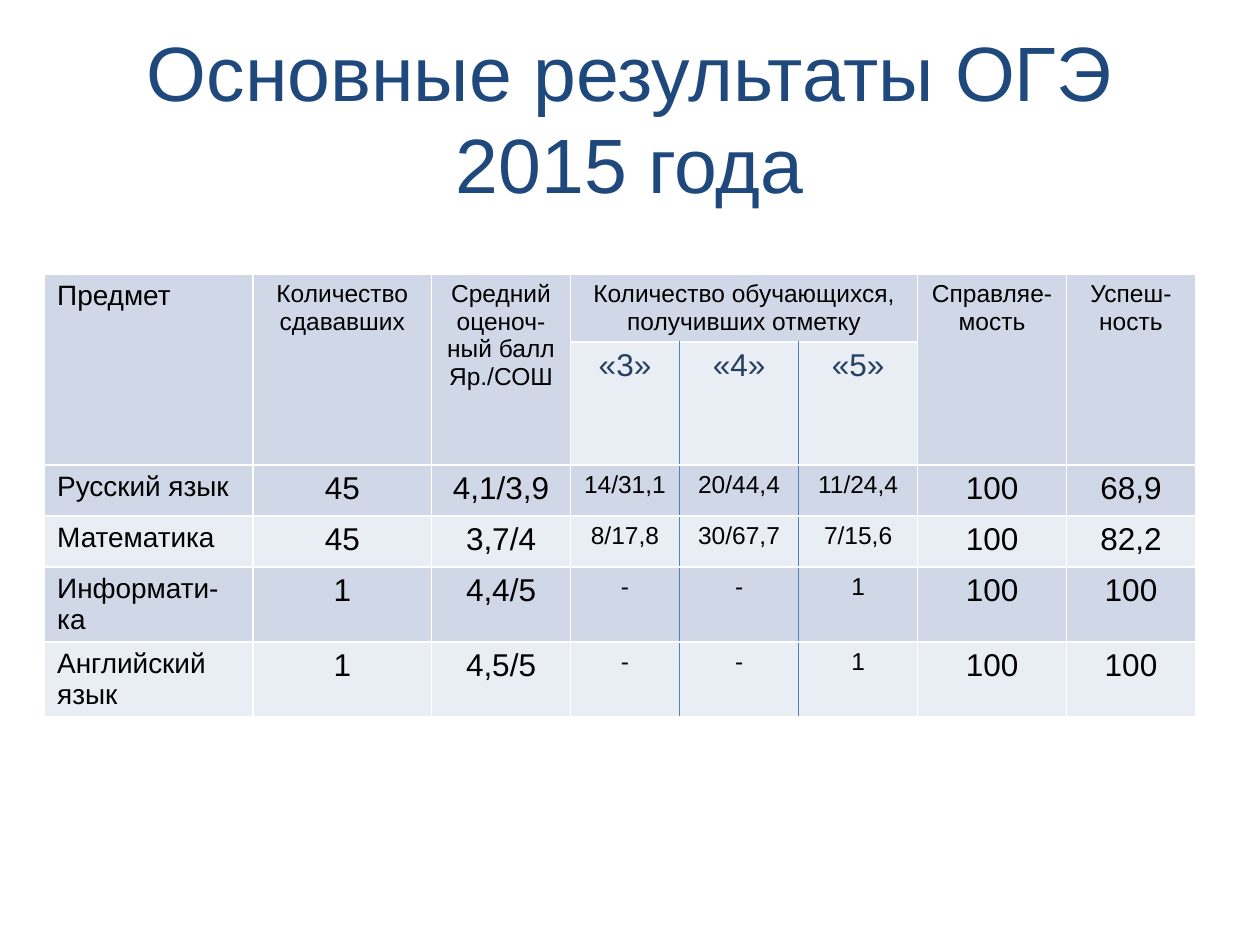
from dataclasses import dataclass
from lxml.etree import SubElement
from pptx import Presentation
from pptx.dml.color import RGBColor
from pptx.enum.text import PP_ALIGN as Align
from pptx.oxml.ns import qn
from pptx.util import Cm, Pt


@dataclass(frozen=True)
class Theme:
    font: str = "Arial"
    title: str = "1F497D"
    mark: str = "254061"
    text: str = "000000"
    dark: str = "D0D8E8"
    light: str = "E9EDF4"
    grid: str = "FFFFFF"
    rule: str = "4F81BD"
    head: int = 44
    large: int = 18
    mid: int = 16
    small: int = 14


theme = Theme()


def write(frame, text, size, color, align):
    """Put each line of text in its own paragraph."""
    for i, line in enumerate(text.split("\n")):
        para = frame.add_paragraph() if i else frame.paragraphs[0]
        para.alignment = align
        run = para.add_run()
        run.text = line
        run.font.name = theme.font
        run.font.size = Pt(size)
        run.font.color.rgb = RGBColor.from_string(color)


def edge(cell, side, color):
    line = SubElement(cell._tc.get_or_add_tcPr(), qn(f"a:ln{side}"), w=str(Pt(1)))
    fill = SubElement(line, qn("a:solidFill"))
    SubElement(fill, qn("a:srgbClr"), val=color)


deck = Presentation()
deck.slide_width, deck.slide_height = Cm(25.4), Cm(19.05)
slide = deck.slides.add_slide(deck.slide_layouts[5])

title = slide.shapes.title
title.left, title.top = Cm(1.27), Cm(0.76)
title.width, title.height = Cm(22.86), Cm(3.18)
write(title.text_frame, "Основные результаты ОГЭ 2015 года",
      theme.head, theme.title, Align.CENTER)

rows = [
    ["Предмет", "Количество сдававших", "Средний оценоч-\nный балл\nЯр./СОШ",
     "Количество обучающихся, получивших отметку", "", "",
     "Справляе-\nмость", "Успеш-ность"],
    ["", "", "", "«3»", "«4»", "«5»", "", ""],
    ["Русский язык", "45", "4,1/3,9", "14/31,1", "20/44,4", "11/24,4", "100", "68,9"],
    ["Математика", "45", "3,7/4", "8/17,8", "30/67,7", "7/15,6", "100", "82,2"],
    ["Информати-ка", "1", "4,4/5", "-", "-", "1", "100", "100"],
    ["Английский язык", "1", "4,5/5", "-", "-", "1", "100", "100"],
]
widths = [4.2, 3.6, 2.8, 2.2, 2.4, 2.4, 3, 2.6]
heights = [1.36, 2.46, 1.03, 1.03, 1.51, 1.51]
marks = range(3, 6)

table = slide.shapes.add_table(len(rows), len(widths), Cm(0.9), Cm(5.53),
                               Cm(sum(widths)), Cm(sum(heights))).table
for col, width in zip(table.columns, widths):
    col.width = Cm(width)
for row, height in zip(table.rows, heights):
    row.height = Cm(height)

table.cell(0, marks[0]).merge(table.cell(0, marks[-1]))
for c in range(len(widths)):
    if c not in marks:
        table.cell(0, c).merge(table.cell(1, c))

for r, row in enumerate(rows):
    for c, text in enumerate(row):
        cell = table.cell(r, c)
        ruled = {"L": r > 0 and c in marks[1:], "R": r > 0 and c in marks[:-1]}
        for side in "LRTB":
            edge(cell, side, theme.rule if ruled.get(side) else theme.grid)
        pale = r % 2 == 1 and (r > 1 or c in marks)
        cell.fill.solid()
        cell.fill.fore_color.rgb = RGBColor.from_string(theme.light if pale else theme.dark)
        if not text:
            continue
        if c == 0:
            size = theme.mid
        elif r == 0 or (r > 1 and c in marks):
            size = theme.small
        else:
            size = theme.large
        write(cell.text_frame, text, size, theme.mark if r == 1 else theme.text,
              Align.CENTER if c else Align.LEFT)

deck.save("out.pptx")
